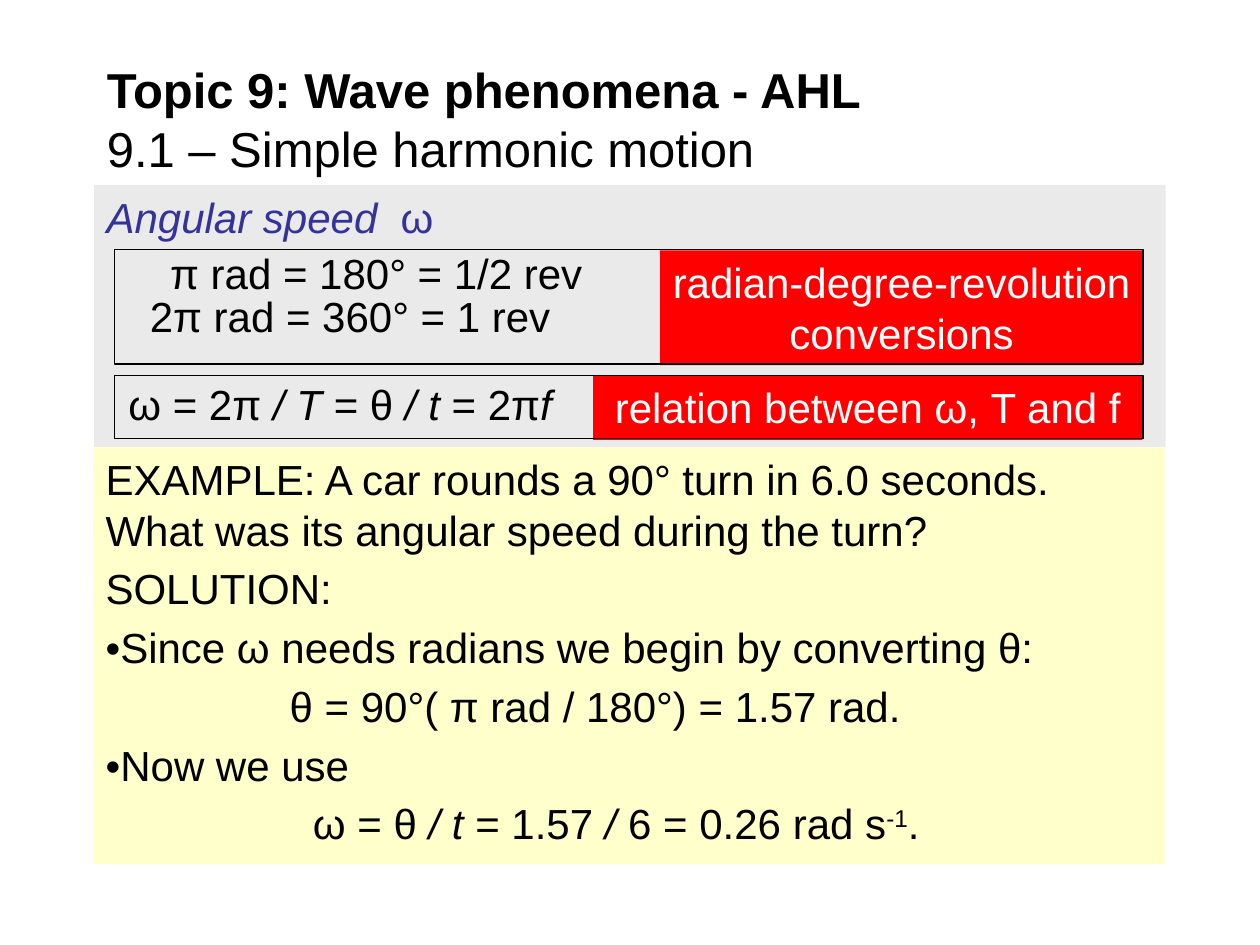
"""Build the angular speed slide on simple harmonic motion."""
from pptx import Presentation
from pptx.dml.color import RGBColor
from pptx.enum.shapes import MSO_SHAPE
from pptx.enum.text import MSO_ANCHOR, MSO_AUTO_SIZE, PP_ALIGN
from pptx.util import Cm, Pt

RECT = MSO_SHAPE.RECTANGLE
TOP, MIDDLE = MSO_ANCHOR.TOP, MSO_ANCHOR.MIDDLE
LEFT, CENTER = PP_ALIGN.LEFT, PP_ALIGN.CENTER
FIXED = MSO_AUTO_SIZE.NONE
BLACK = RGBColor(0, 0, 0)
WHITE = RGBColor(255, 255, 255)
RED = RGBColor(255, 0, 0)
GRAY = RGBColor(0xEA, 0xEA, 0xEA)
CREAM = RGBColor(0xFF, 0xFF, 0xCC)
BLUE = RGBColor(0x33, 0x33, 0x99)


def write(par, text, size=24, color=BLACK, bold=False, lift=0):
    """Add text to a paragraph; parts between underscores are italic."""
    for i, part in enumerate(text.split("_")):
        if not part:
            continue
        run = par.add_run()
        run.text = part
        font = run.font
        font.name, font.size, font.bold = "Arial", Pt(size), bold
        font.italic = i % 2 == 1
        font.color.rgb = color
        if lift:
            font._element.set("baseline", str(lift))


def block(left, top, width, height, fill=None, line=None):
    """Add a plain rectangle and return its text frame."""
    shape = slide.shapes.add_shape(RECT, Cm(left), Cm(top), Cm(width), Cm(height))
    shape.shadow.inherit = False
    if fill is None:
        shape.fill.background()
    else:
        shape.fill.solid()
        shape.fill.fore_color.rgb = fill
    if line is None:
        shape.line.fill.background()
    else:
        shape.line.color.rgb = line
        shape.line.width = Pt(1)
    frame = shape.text_frame
    frame.word_wrap = True
    frame.vertical_anchor = TOP
    frame.paragraphs[0].alignment = LEFT
    frame.paragraphs[0].space_before = Pt(4.8)
    return frame


deck = Presentation()
deck.slide_width, deck.slide_height = Cm(25.4), Cm(19.05)
slide = deck.slides.add_slide(deck.slide_layouts[5])

title = slide.shapes.title
title.left, title.top, title.width, title.height = Cm(1.9), Cm(1.14), Cm(21.6), Cm(2.49)
frame = title.text_frame
frame.auto_size = FIXED
frame.word_wrap = True
frame.vertical_anchor = MIDDLE
par = frame.paragraphs[0]
par.alignment = LEFT
write(par, "Topic 9: Wave phenomena - AHL", size=28, bold=True)
par.add_line_break()
write(par, "9.1 – Simple harmonic motion", size=28)

topic = block(1.9, 3.73, 21.6, 5.28, fill=GRAY)
write(topic.paragraphs[0], "_Angular speed_  ω", color=BLUE)

work = block(1.88, 9.02, 21.6, 8.4, fill=CREAM)
steps = [
    ("EXAMPLE: A car rounds a 90° turn in 6.0 seconds. "
     "What was its angular speed during the turn?", 0),
    ("SOLUTION:", 0),
    ("•Since ω needs radians we begin by converting θ:", 0),
    ("θ = 90°( π rad / 180°) = 1.57 rad.", 3.71),
    ("•Now we use", 0),
    ("ω = θ _/ t_ = 1.57 _/_ 6 = 0.26 rad s", 4.18),
]
for i, (text, indent) in enumerate(steps):
    par = work.add_paragraph() if i else work.paragraphs[0]
    par.alignment = LEFT
    par.space_before = Pt(4.8)
    par._p.get_or_add_pPr().set("marL", str(Cm(indent)))
    write(par, text)
write(par, "-1", lift=30000)
write(par, ".")

labels = [
    (11.96, 7.57, 11.07, 1.3, "relation between ω, T and f"),
    (13.31, 5.05, 9.73, 2.31, "radian-degree-revolution conversions"),
]
for left, top, width, height, text in labels:
    par = block(left, top, width, height, fill=RED).paragraphs[0]
    par.alignment = CENTER
    par.space_before = Pt(12)
    write(par, text, color=WHITE)

for top, height in [(7.57, 1.27), (5.03, 2.31)]:
    block(2.31, top, 20.73, height, line=BLACK)

rules = [
    (2.34, 7.62, 9.25, 1.04, "ω = 2π _/ T _= θ _/ t _= 2π_f_"),
    (3.18, 4.98, 10.06, 0.89, "π rad = 180° = 1/2 rev"),
    (2.77, 5.84, 11.68, 0.89, "2π rad = 360° = 1 rev"),
]
for left, top, width, height, text in rules:
    frame = slide.shapes.add_textbox(Cm(left), Cm(top), Cm(width), Cm(height)).text_frame
    frame.word_wrap = True
    par = frame.paragraphs[0]
    par.line_spacing = 0.9
    par.space_before = Pt(4.8)
    write(par, text)

deck.save("out.pptx")
